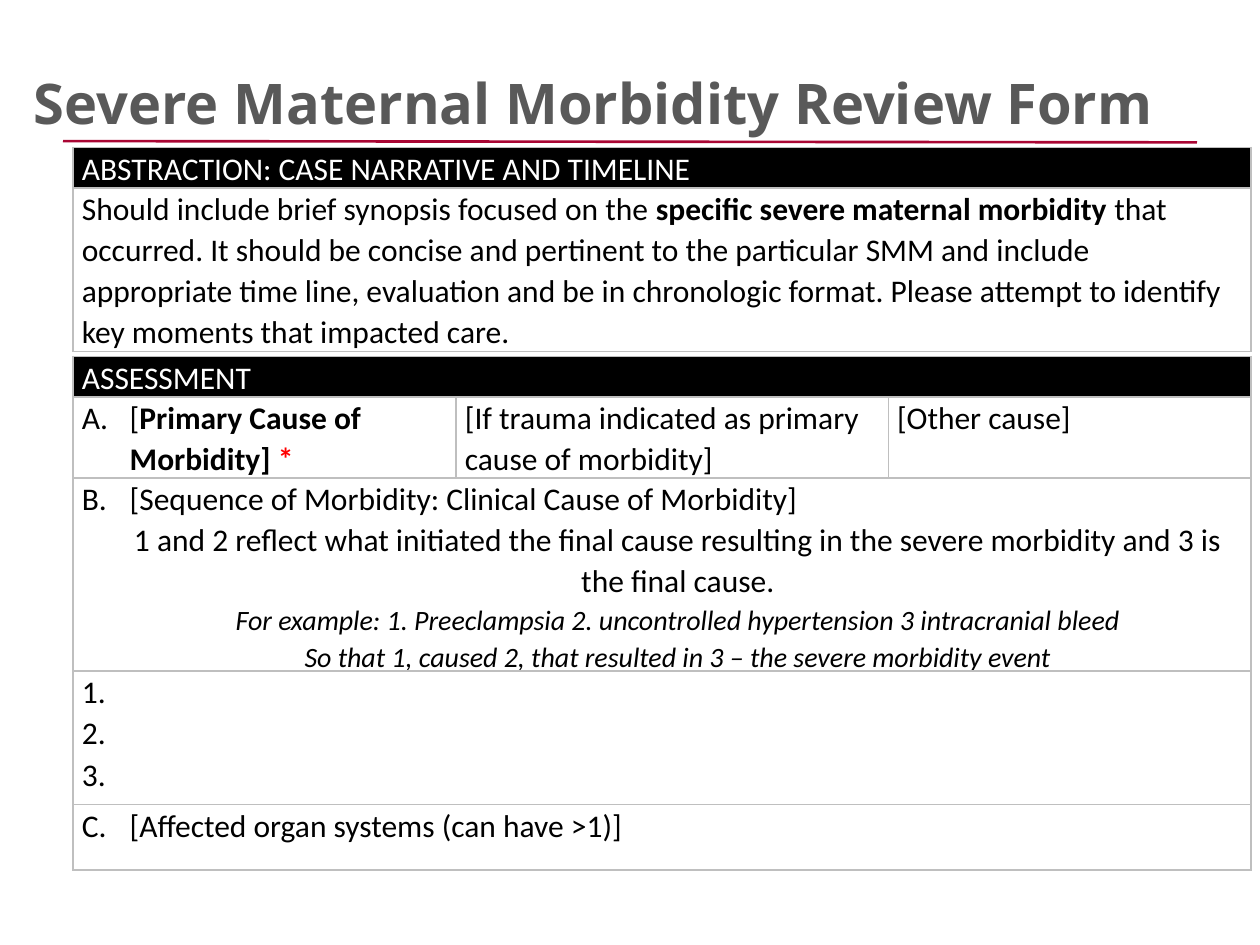
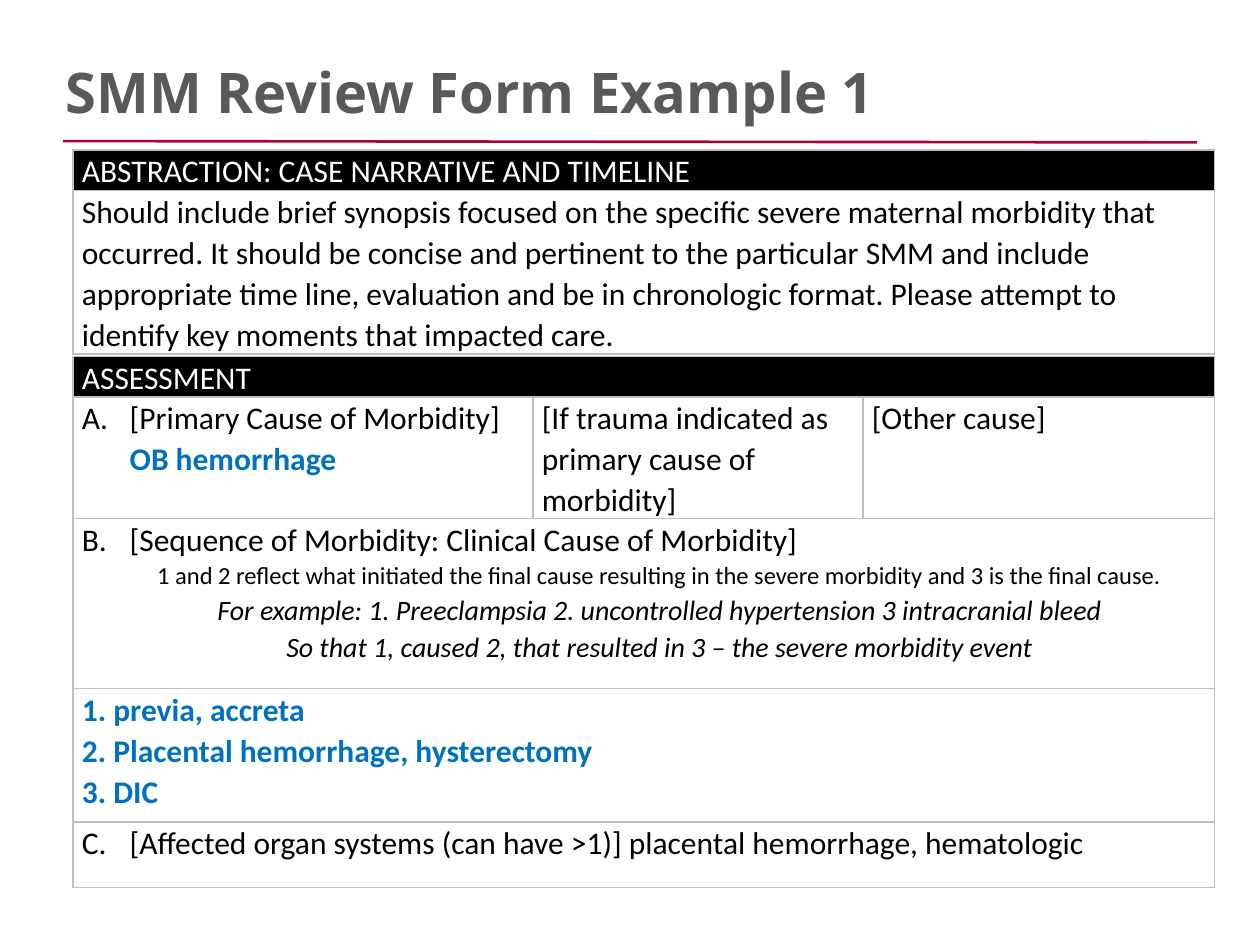
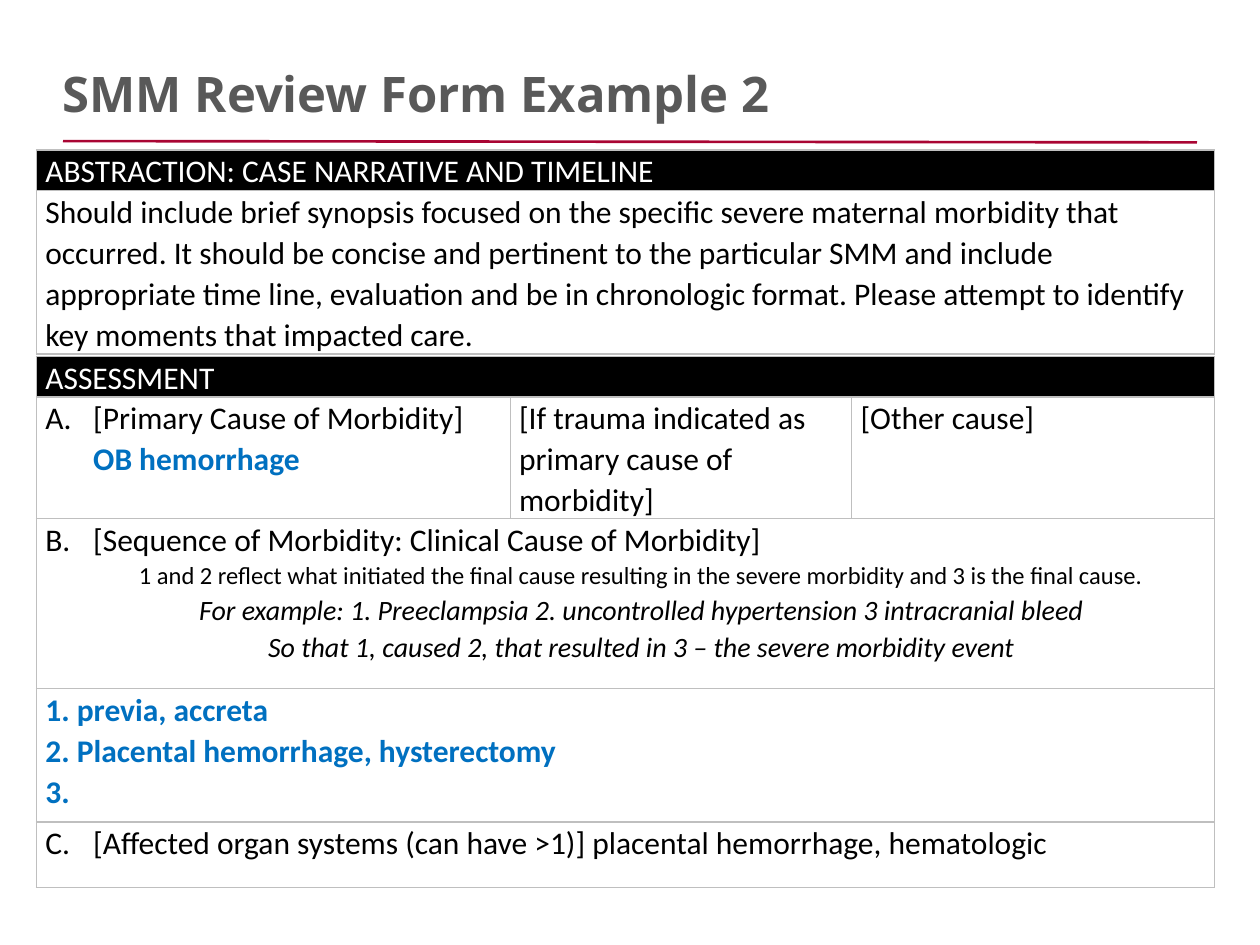
from lxml import etree
from pptx import Presentation
from pptx.dml.color import RGBColor
from pptx.enum import shapes, text
from pptx.oxml import ns
from pptx.util import Inches, Pt

BLACK = RGBColor(0x00, 0x00, 0x00)
WHITE = RGBColor(0xFF, 0xFF, 0xFF)
RED = RGBColor(0xFF, 0x00, 0x00)
BLUE = RGBColor(0x00, 0x70, 0xC0)
TITLE_GREY = RGBColor(0x59, 0x59, 0x59)
RULE_CRIMSON = RGBColor(0xA9, 0x05, 0x33)
BORDER_GREY = RGBColor(0xBF, 0xBF, 0xBF)
TITLE_FONT, BODY_FONT = "Noto Sans", "Calibri"

SYNOPSIS_START = "Should include brief synopsis focused on the "
SYNOPSIS_TOPIC = "specific severe maternal morbidity "
SYNOPSIS_END = (
    "that occurred. It should be concise and pertinent to the particular SMM and "
    "include appropriate time line, evaluation and be in chronologic format. Please "
    "attempt to identify key moments that impacted care."
)
SEQUENCE_RULE = (
    "1 and 2 reflect what initiated the final cause resulting in the severe "
    "morbidity and 3 is the final cause."
)
SEQUENCE_EXAMPLE = (
    "For example: 1. Preeclampsia 2. uncontrolled hypertension 3 intracranial bleed",
    "So that 1, caused 2, that resulted in 3 – the severe morbidity event",
)
ORGANS = "[Affected organ systems (can have >1)]"


def add_span(para, words, size=18, color=BLACK, bold=False, italic=False, font=BODY_FONT):
    span = para.add_run()
    span.text = words
    span.font.name, span.font.size = font, Pt(size)
    span.font.bold, span.font.italic = bold, italic
    span.font.color.rgb = color


def next_para(cell):
    """Return the cell's empty first paragraph, or a new one after it."""
    frame = cell.text_frame
    para = frame.paragraphs[0]
    if para.runs:
        para = frame.add_paragraph()
    para.line_spacing = 1.07
    return para


def write(cell, words, **style):
    add_span(next_para(cell), words, **style)


def write_centred(cell, words, **style):
    para = next_para(cell)
    para.alignment = text.PP_ALIGN.CENTER
    para._p.get_or_add_pPr().set("marL", str(Inches(0.25)))
    add_span(para, words, **style)


def lettered_para(cell, number):
    """Start a hanging paragraph marked A., B. or C."""
    para = next_para(cell)
    props = para._p.get_or_add_pPr()
    props.set("marL", str(Inches(0.38)))
    props.set("indent", str(Inches(-0.38)))
    mark = etree.SubElement(props, ns.qn("a:buAutoNum"), type="alphaUcPeriod")
    mark.set("startAt", str(number))
    return para


def add_borders(cell):
    props = cell._tc.get_or_add_tcPr()
    for side in ("lnL", "lnR", "lnT", "lnB"):
        edge = etree.SubElement(props, ns.qn("a:" + side), w=str(Pt(1)))
        fill = etree.SubElement(edge, ns.qn("a:solidFill"))
        etree.SubElement(fill, ns.qn("a:srgbClr"), val=str(BORDER_GREY))


def add_grid(page, left, top, widths, heights, heading):
    """Add a bordered table whose first row is a black heading band."""
    grid = page.shapes.add_table(
        len(heights), len(widths), Inches(left), Inches(top),
        Inches(sum(widths)), Inches(sum(heights))).table
    grid.first_row = grid.horz_banding = False
    for column, width in zip(grid.columns, widths):
        column.width = Inches(width)
    for row, height in zip(grid.rows, heights):
        row.height = Inches(height)
    for cell in grid.iter_cells():
        cell.margin_left = cell.margin_right = Inches(0.07)
        cell.margin_top = cell.margin_bottom = 0
        add_borders(cell)
        cell.fill.background()
    for cell in grid.rows[0].cells:
        cell.fill.solid()
        cell.fill.fore_color.rgb = BLACK
    if len(widths) > 1:
        grid.cell(0, 0).merge(grid.cell(0, len(widths) - 1))
    write(grid.cell(0, 0), heading, color=WHITE)
    return grid


def add_title(page, words, box, size, anchor):
    frame = page.shapes.add_textbox(*map(Inches, box)).text_frame
    frame.word_wrap = True
    frame.vertical_anchor = anchor
    frame.margin_bottom = Inches(0.01)
    add_span(frame.paragraphs[0], words, size, TITLE_GREY, bold=True, font=TITLE_FONT)


def add_title_rule(page):
    rule = page.shapes.add_connector(
        shapes.MSO_CONNECTOR.STRAIGHT, Inches(0.5), Inches(1.12), Inches(9.5), Inches(1.13))
    rule.line.color.rgb = RULE_CRIMSON
    rule.line.width = Pt(1.5)
    etree.SubElement(rule._element.spPr, ns.qn("a:effectLst"))


def add_abstraction(page, left, top, width, bold_topic=False):
    grid = add_grid(page, left, top, [width], [0.32, 1.3],
                    "ABSTRACTION: CASE NARRATIVE AND TIMELINE")
    para = next_para(grid.cell(1, 0))
    add_span(para, SYNOPSIS_START)
    add_span(para, SYNOPSIS_TOPIC, bold=bold_topic)
    add_span(para, SYNOPSIS_END)


def add_assessment(page, left, widths, middle_heights, cause, rule_size, sequence,
                   sequence_style, organs):
    grid = add_grid(page, left, 2.83, widths, [0.32, *middle_heights, 1.06, 0.52],
                    "ASSESSMENT")
    for row in range(2, 5):
        grid.cell(row, 0).merge(grid.cell(row, 2))

    # A: primary cause
    para = lettered_para(grid.cell(1, 0), 1)
    for words, style in cause:
        add_span(para, words, **style)
    write(grid.cell(1, 1), "[If trauma indicated as primary cause of morbidity]")
    write(grid.cell(1, 2), "[Other cause]")

    # B: sequence and its answers
    cell = grid.cell(2, 0)
    add_span(lettered_para(cell, 2), "[Sequence of Morbidity: Clinical Cause of Morbidity]")
    write_centred(cell, SEQUENCE_RULE, size=rule_size)
    for line in SEQUENCE_EXAMPLE:
        write_centred(cell, line, size=16, italic=True)
    for line in sequence:
        write(grid.cell(3, 0), line, **sequence_style)

    # C: organ systems
    add_span(lettered_para(grid.cell(4, 0), 3), organs)


def build_blank_form(page):
    add_title_rule(page)
    add_title(page, "Severe Maternal Morbidity Review Form", (0.17, 0, 9.83, 1.09), 32,
              text.MSO_ANCHOR.BOTTOM)
    add_abstraction(page, 0.58, 1.17, 9.35, bold_topic=True)
    cause = [("[", {}), ("Primary Cause of Morbidity] ", {"bold": True}),
             ("*", {"bold": True, "color": RED})]
    add_assessment(page, 0.58, [3.04, 3.43, 2.88], [0.64, 1.53], cause, 18,
                   ["1.", "2.", "3."], {}, ORGANS)


def build_example(page, title, title_box, title_size, anchor, left, widths, third_step):
    answer = {"bold": True, "color": BLUE}
    add_title_rule(page)
    add_title(page, title, title_box, title_size, anchor)
    add_abstraction(page, left, 1.19, sum(widths))
    cause = [("[Primary Cause of Morbidity] ", {}), ("OB hemorrhage", answer)]
    steps = ["1. previa, accreta", "2. Placental hemorrhage, hysterectomy", third_step]
    add_assessment(page, left, widths, [0.96, 1.35], cause, 14, steps, answer,
                   ORGANS + " placental hemorrhage, hematologic")


def main():
    deck = Presentation()
    deck.slide_width, deck.slide_height = Inches(10), Inches(7.5)
    pages = [deck.slides.add_slide(deck.slide_layouts[6]) for _ in range(3)]
    build_blank_form(pages[0])
    build_example(pages[1], "SMM Review Form Example 1", (0.42, 0.08, 9.58, 1.25), 32,
                  text.MSO_ANCHOR.MIDDLE, 0.58, [3.65, 2.62, 2.79], "3. DIC")
    build_example(pages[2], "SMM Review Form Example 2", (0.4, 0.17, 9, 0.81), 28,
                  text.MSO_ANCHOR.BOTTOM, 0.29, [3.76, 2.71, 2.88], "3.")
    deck.save("out.pptx")


if __name__ == "__main__":
    main()
